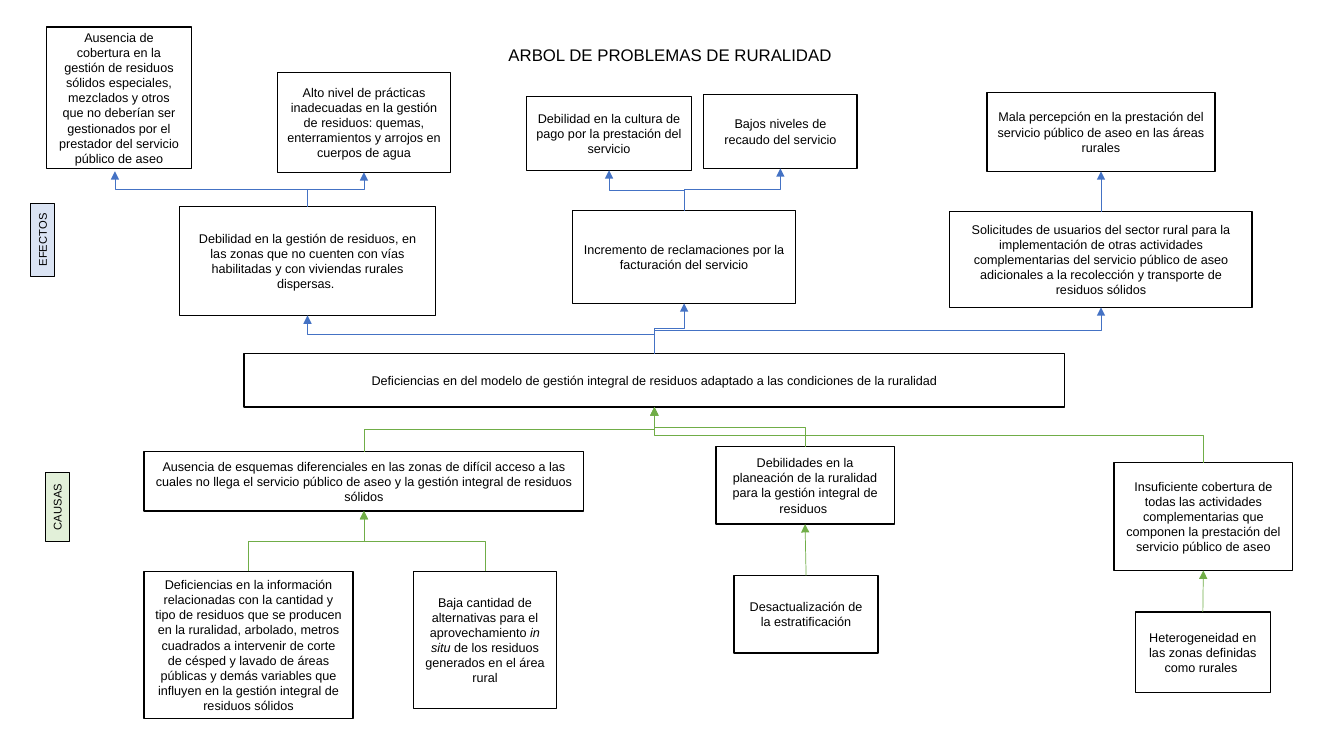
from dataclasses import dataclass
from typing import Optional

from lxml.etree import SubElement
from pptx import Presentation
from pptx.dml.color import RGBColor
from pptx.enum.shapes import MSO_CONNECTOR as Connector
from pptx.enum.shapes import MSO_SHAPE as Preset
from pptx.enum.text import MSO_ANCHOR as Anchor
from pptx.enum.text import MSO_AUTO_SIZE as AutoSize
from pptx.enum.text import PP_ALIGN as Align
from pptx.oxml.ns import qn
from pptx.util import Inches, Pt

BLACK = RGBColor(0x00, 0x00, 0x00)
WHITE = RGBColor(0xFF, 0xFF, 0xFF)
BLUE = RGBColor(0x44, 0x72, 0xC4)
GREEN = RGBColor(0x70, 0xAD, 0x47)
PALE_BLUE = RGBColor(0xDA, 0xE3, 0xF3)
PALE_GREEN = RGBColor(0xE2, 0xF0, 0xD9)
FONT = "Arial"
TOP, BOTTOM = 0, 2


@dataclass(frozen=True)
class Box:
    name: str
    left: float
    top: float
    width: float
    height: float
    runs: tuple[str, ...]
    italic_run: int = -1


@dataclass(frozen=True)
class Link:
    source: str
    target: str
    color: RGBColor
    end: Optional[tuple[float, float]] = None


@dataclass(frozen=True)
class Tag:
    text: str
    left: float
    top: float
    width: float
    fill: RGBColor


BOXES = (
    Box("modelo", 2.42, 3.51, 8.14, 0.53, (
        "Deficiencias en del modelo de gestión integral de residuos adaptado a las "
        "condiciones de la ruralidad",)),
    Box("esquemas", 1.43, 4.48, 4.36, 0.59, (
        "Ausencia de esquemas diferenciales en las zonas de difícil acceso a las cuales no "
        "llega el servicio público de aseo y la gestión integral de residuos sólidos",)),
    Box("planeación", 7.1, 4.43, 1.77, 0.77, (
        "Debilidades en la planeación de la ruralidad para la gestión integral de residuos ",)),
    Box("complementarias", 11.05, 4.59, 1.77, 1.07, (
        "Insuficiente cobertura de todas las actividades complementarias que componen la "
        "prestación del servicio público de aseo",)),
    Box("información", 1.43, 5.67, 2.07, 1.46, (
        "Deficiencias en la información relacionadas con la cantidad y tipo de residuos que "
        "se producen en la ruralidad, arbolado, metros cuadrados a intervenir de corte de "
        "césped y lavado de áreas públicas y demás variables que influyen en la gestión "
        "integral de residuos sólidos",)),
    Box("alternativas", 4.1, 5.67, 1.42, 1.36, (
        "Baja cantidad de alternativas para el aprovechamiento ", "in situ ",
        "de los residuos generados en el área rural"), 1),
    Box("heterogeneidad", 11.26, 6.07, 1.34, 0.8, (
        "Heterogeneidad en las zonas definidas como rurales ",)),
    Box("gestión", 1.78, 2.05, 2.54, 1.08, (
        "Debilidad en la gestión de residuos, en las zonas que no cuenten con vías "
        "habilitadas y con viviendas rurales dispersas. ",)),
    Box("prácticas", 2.75, 0.72, 1.72, 0.99, (
        "Alto nivel de prácticas inadecuadas en la gestión de residuos: quemas, "
        "enterramientos y arrojos en cuerpos de agua",)),
    Box("reclamaciones", 5.68, 2.09, 2.21, 0.92, (
        "Incremento de reclamaciones por la facturación del servicio",)),
    Box("pago", 5.22, 0.96, 1.64, 0.73, (
        "Debilidad en la cultura de pago por la prestación del servicio",)),
    Box("recaudo", 6.98, 0.94, 1.52, 0.73, ("Bajos niveles de recaudo del servicio",)),
    Box("solicitudes", 9.42, 2.1, 3, 0.95, (
        "Solicitudes de usuarios del sector rural para la implementación de otras "
        "actividades complementarias del servicio público de aseo adicionales a la "
        "recolección y transporte de residuos sólidos",)),
    Box("percepción", 9.79, 0.92, 2.26, 0.78, (
        "Mala percepción en la prestación del servicio público de aseo en las áreas rurales",)),
    Box("cobertura", 0.46, 0.27, 1.44, 1.4, (
        "Ausencia de cobertura en la gestión de residuos sólidos especiales, mezclados y "
        "otros que no deberían ser gestionados por el prestador del servicio público de aseo",)),
    Box("estratificación", 7.28, 5.71, 1.43, 0.77, ("Desactualización de la estratificación",)),
)

LINKS = (
    Link("información", "esquemas", GREEN),
    Link("alternativas", "esquemas", GREEN),
    Link("heterogeneidad", "complementarias", GREEN),
    Link("estratificación", "planeación", GREEN),
    Link("esquemas", "modelo", GREEN),
    Link("planeación", "modelo", GREEN),
    Link("complementarias", "modelo", GREEN),
    Link("modelo", "gestión", BLUE),
    Link("modelo", "reclamaciones", BLUE),
    Link("modelo", "solicitudes", BLUE),
    Link("gestión", "cobertura", BLUE, (1.14, 1.7)),
    Link("gestión", "prácticas", BLUE),
    Link("reclamaciones", "pago", BLUE),
    Link("reclamaciones", "recaudo", BLUE),
    Link("solicitudes", "percepción", BLUE),
)

TAGS = (
    Tag("CAUSAS", 0.23, 4.91, 0.68, PALE_GREEN),
    Tag("EFECTOS", 0.06, 2.26, 0.73, PALE_BLUE),
)


def add_run(paragraph, text: str, size: float, italic: bool = False) -> None:
    run = paragraph.add_run()
    run.text = text
    run.font.name = FONT
    run.font.size = Pt(size)
    run.font.italic = italic
    run.font.color.rgb = BLACK


def add_rectangle(slide, left: float, top: float, width: float, height: float,
                  fill: RGBColor, line_width: float):
    shape = slide.shapes.add_shape(
        Preset.RECTANGLE, Inches(left), Inches(top), Inches(width), Inches(height))
    shape.shadow.inherit = False
    shape.fill.solid()
    shape.fill.fore_color.rgb = fill
    shape.line.color.rgb = BLACK
    shape.line.width = Pt(line_width)
    shape.text_frame.word_wrap = True
    shape.text_frame.paragraphs[0].alignment = Align.CENTER
    return shape


def add_title(slide) -> None:
    shape = slide.shapes.add_textbox(Inches(0.92), Inches(0.4), Inches(11.5), Inches(0.31))
    shape.text_frame.word_wrap = True
    shape.text_frame.vertical_anchor = Anchor.MIDDLE
    paragraph = shape.text_frame.paragraphs[0]
    paragraph.alignment = Align.CENTER
    paragraph.line_spacing = 0.9
    add_run(paragraph, "ARBOL DE PROBLEMAS DE RURALIDAD ", 12)


def add_box(slide, box: Box):
    shape = add_rectangle(slide, box.left, box.top, box.width, box.height, WHITE, 1)
    shape.text_frame.vertical_anchor = Anchor.MIDDLE
    for index, text in enumerate(box.runs):
        add_run(shape.text_frame.paragraphs[0], text, 9, index == box.italic_run)
    return shape


def add_tag(slide, tag: Tag) -> None:
    shape = add_rectangle(slide, tag.left, tag.top, tag.width, 0.24, tag.fill, 0.75)
    shape.rotation = 270
    shape.text_frame.vertical_anchor = Anchor.TOP
    shape.text_frame.auto_size = AutoSize.SHAPE_TO_FIT_TEXT
    add_run(shape.text_frame.paragraphs[0], tag.text, 8)


def turn_upright(connector) -> None:
    start_x, start_y = connector.begin_x, connector.begin_y
    end_x, end_y = connector.end_x, connector.end_y
    rise, run = start_y - end_y, abs(end_x - start_x)
    rightward = end_x > start_x
    connector.left = (start_x + end_x - rise) // 2
    connector.top = (start_y + end_y - run) // 2
    connector.width, connector.height = rise, run
    transform = connector._element.spPr.find(qn("a:xfrm"))
    transform.set("rot", str((90 if rightward else 270) * 60000))
    transform.set("flipH", "1" if rightward else "0")
    transform.set("flipV", "1")


def add_link(slide, link: Link, shapes: dict) -> None:
    source, target = shapes[link.source], shapes[link.target]
    start_x, start_y = source.left + source.width // 2, source.top
    end_x, end_y = target.left + target.width // 2, target.top + target.height
    if link.end:
        end_x, end_y = (Inches(value) for value in link.end)
    bent = abs(end_x - start_x) > Inches(0.02)
    kind = Connector.ELBOW if bent else Connector.STRAIGHT
    connector = slide.shapes.add_connector(kind, start_x, start_y, end_x, end_y)
    connector.begin_connect(source, TOP)
    if not link.end:
        connector.end_connect(target, BOTTOM)
    if bent:
        turn_upright(connector)
    connector.line.color.rgb = link.color
    connector.line.width = Pt(0.5)
    SubElement(connector.line._get_or_add_ln(), qn("a:tailEnd"), type="triangle")
    SubElement(connector._element.spPr, qn("a:effectLst"))


def main() -> None:
    presentation = Presentation()
    presentation.slide_width = Inches(13.33)
    presentation.slide_height = Inches(7.5)
    slide = presentation.slides.add_slide(presentation.slide_layouts[6])
    add_title(slide)
    shapes = {box.name: add_box(slide, box) for box in BOXES}
    for link in LINKS:
        add_link(slide, link, shapes)
    for tag in TAGS:
        add_tag(slide, tag)
    presentation.save("out.pptx")


if __name__ == "__main__":
    main()
